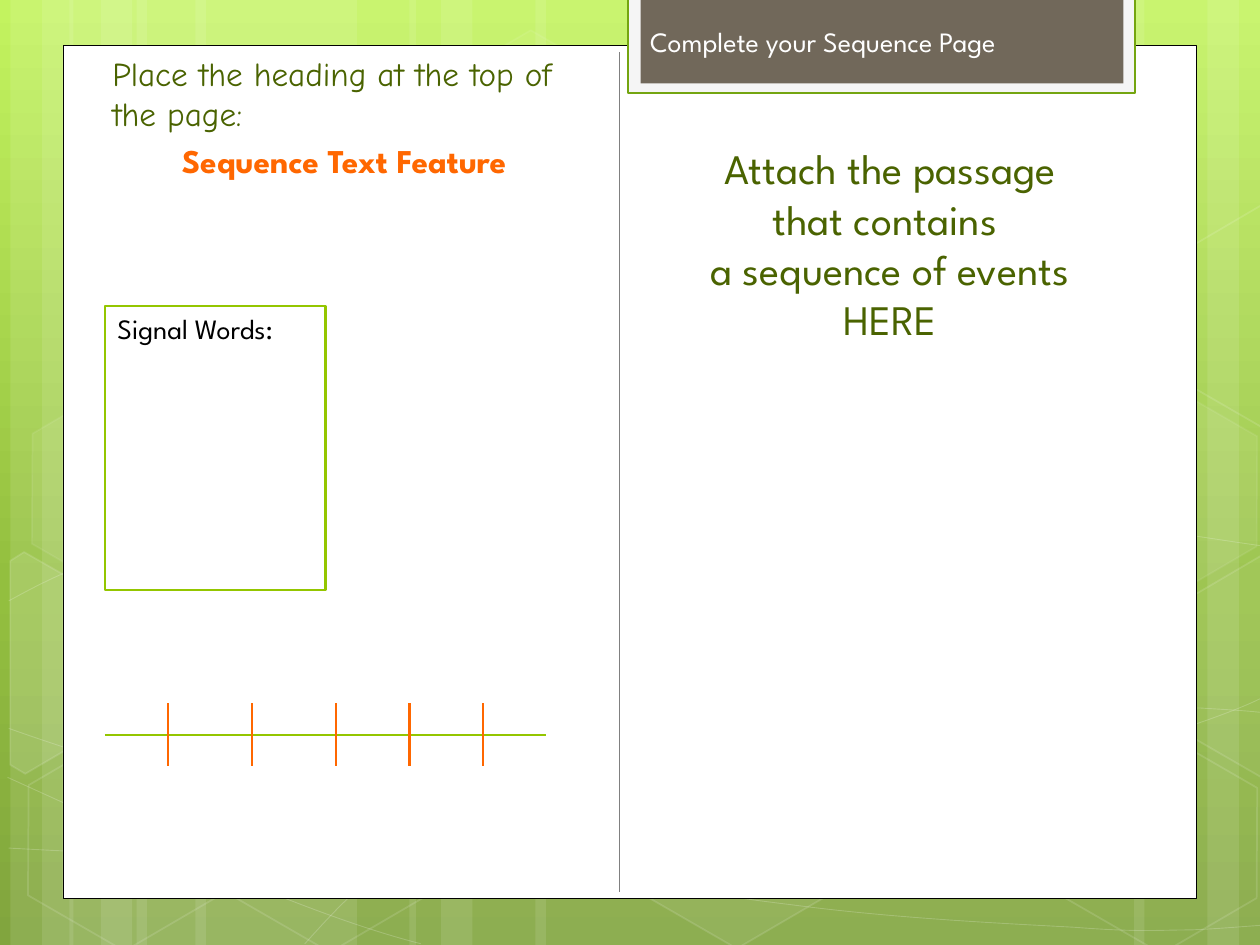
from copy import deepcopy
from dataclasses import dataclass
from math import cos, radians, sin

from lxml.etree import SubElement
from pptx import Presentation
from pptx.dml.color import RGBColor
from pptx.enum.shapes import MSO_CONNECTOR, MSO_SHAPE
from pptx.enum.text import MSO_ANCHOR, MSO_AUTO_SIZE, PP_ALIGN
from pptx.oxml.ns import qn
from pptx.util import Pt


@dataclass(frozen=True)
class Theme:
    sky: tuple = ((0, "C3F35F"), (0.62, "93BF3F"), (1, "81A53E"))
    white: str = "FFFFFF"
    black: str = "000000"
    tab: str = "F5F5F5"
    tab_edge: str = "74A510"
    taupe: str = "71685A"
    olive: str = "4A6300"
    green: str = "94C600"
    orange: str = "FF6700"
    divider: str = "808080"
    font: str = "League Spartan"
    hand_font: str = "Comic Neue"
    small: int = 16
    medium: int = 19
    large: int = 24


THEME = Theme()
INDENT = 8.64
TILT = 30
HEXAGONS = [  # left, top, fill opacity, line opacity
    (240.5, 25.9, 4, 8), (357.8, 424.1, 6, 12), (7.9, 425.5, 0, 12),
    (10.1, 224.6, 7, 8), (125.3, 426.2, 0, 12), (542.2, 326.2, 10, 12),
    (600.5, 427, 0, 12), (600.5, 226.1, 7, 8),
]
LEFT_HEXAGON = [(5.8, 320.4), (13.7, 315.4), (69.1, 347), (68.4, 410.4),
                (14.4, 442.1), (5.8, 437)]
RIGHT_HEXAGON = [(666.7, 349.2), (720.7, 317.5), (726.5, 321.1),
                 (726.5, 441.4), (721.4, 444.2), (666.7, 412.6)]
# Each curve is a start point, then two control points and an end per segment.
CURVES = [
    [(5, 484.6), (43.9, 486.7), (82.8, 488.9), (136.8, 488.2),
     (190.8, 487.4), (257.8, 486), (329.8, 478.8),
     (401.8, 471.6), (504, 457.9), (570.2, 444.2),
     (635.8, 430.6), (703.4, 409), (725, 396.7)],
    [(5, 343.4), (25.9, 331.9), (46.8, 321.1), (87.1, 310.3),
     (128.2, 299.5), (186.5, 283.7), (249.8, 278.6),
     (313.9, 273.6), (391.7, 272.9), (470.9, 278.6),
     (550.1, 284.4), (681.8, 306.7), (725, 312.5)],
    [(4.3, 444.2), (91.4, 483.8), (177.8, 523.4), (240.5, 539.3)],
    [(5, 416.2), (27.4, 424.1), (50.4, 432), (92.2, 443.5),
     (133.9, 454.3), (196.6, 472.3), (257, 484.6),
     (316.8, 496.8), (392.4, 509.8), (452.2, 517),
     (511.9, 524.9), (576, 527.8), (614.2, 529.9),
     (651.6, 532.8), (661.7, 531.4), (680.4, 531.4),
     (699.1, 530.6), (712.1, 529.2), (725, 528.5)],
    [(174.2, 539.3), (187.2, 524.9), (200.2, 510.5), (217.4, 497.5),
     (234.7, 484.6), (259.2, 470.2), (279.4, 460.1),
     (299.5, 450), (311.8, 445.7), (338.4, 438.5),
     (364.3, 431.3), (412.6, 421.2), (437.8, 416.2),
     (463.7, 411.1), (467.3, 411.1), (489.6, 409.7),
     (511.9, 407.5), (547.2, 405.4), (571.7, 404.6),
     (596.9, 403.9), (637.9, 404.6), (637.9, 404.6),
     (637.9, 404.6), (686.2, 404.6), (686.2, 404.6),
     (699.1, 405.4), (711.4, 406.1), (717.8, 406.8),
     (724.3, 407.5), (722.2, 406.8), (724.3, 407.5)],
]


def untilt(points, center):
    """Turn points back by the tilt, so that the shape's rotation restores them."""
    c, s = cos(radians(TILT)), sin(radians(TILT))
    cx, cy = center
    return [(cx + (x - cx) * c + (y - cy) * s, cy - (x - cx) * s + (y - cy) * c)
            for x, y in points]


class SlideBuilder:
    def __init__(self, slide, theme):
        self.slide, self.theme = slide, theme

    def background(self):
        fill = self.slide.background.fill
        fill.gradient()
        fill.gradient_angle = 270
        stops = self.slide._element.find(".//" + qn("a:gsLst"))
        stops.append(deepcopy(stops[0]))
        for stop, (position, color) in zip(fill.gradient_stops, self.theme.sky):
            stop.position = position
            stop.color.rgb = RGBColor.from_string(color)

    def paint(self, shape, fill=None, line=None, width=1, fill_alpha=100, line_alpha=100):
        """Set fill and line; alphas are percentages of opacity."""
        shape.shadow.inherit = False
        for part, color in ((shape.fill, fill), (shape.line.fill, line)):
            if color:
                part.solid()
                part.fore_color.rgb = RGBColor.from_string(color)
            else:
                part.background()
        if line:
            shape.line.width = Pt(width)
        for parent, alpha in (("", fill_alpha), (qn("a:ln") + "/", line_alpha)):
            color = shape._element.spPr.find(parent + qn("a:solidFill") + "/" + qn("a:srgbClr"))
            if color is not None and alpha < 100:
                SubElement(color, qn("a:alpha"), val=str(alpha * 1000))

    def preset(self, box, kind=MSO_SHAPE.RECTANGLE, **paint):
        shape = self.slide.shapes.add_shape(kind, *map(Pt, box))
        self.paint(shape, **paint)
        return shape

    def outline(self, points, close, **paint):
        (x, y), *others = [(Pt(x), Pt(y)) for x, y in points]
        builder = self.slide.shapes.build_freeform(x, y)
        builder.add_line_segments(others, close=close)
        shape = builder.convert_to_shape()
        self.paint(shape, **paint)
        return shape

    def curve(self, knots, **paint):
        """Draw the knots as a chain of cubic Bezier segments."""
        shape = self.outline(knots, False, **paint)
        segments = shape._element.find(".//" + qn("a:moveTo")).getparent()
        corners = segments.findall(qn("a:lnTo"))
        for i in range(0, len(corners), 3):
            bezier = SubElement(segments, qn("a:cubicBezTo"))
            for corner in corners[i:i + 3]:
                bezier.append(corner[0])
                segments.remove(corner)

    def line(self, start, end, color, width=1.5):
        connector = self.slide.shapes.add_connector(MSO_CONNECTOR.STRAIGHT, *map(Pt, start + end))
        connector.line.color.rgb = RGBColor.from_string(color)
        connector.line.width = Pt(width)
        SubElement(connector._element.spPr, qn("a:effectLst"))

    def text(self, shape, paragraphs, indent=0):
        """Write (text, size, color, options) paragraphs, anchored at the top."""
        frame = shape.text_frame
        frame.word_wrap = True
        frame.auto_size = MSO_AUTO_SIZE.NONE
        frame.vertical_anchor = MSO_ANCHOR.TOP
        for i, (words, size, color, options) in enumerate(paragraphs):
            paragraph = frame.add_paragraph() if i else frame.paragraphs[0]
            paragraph.alignment = options.get("align", PP_ALIGN.LEFT)
            paragraph.space_before = Pt(options.get("before", 0))
            properties = paragraph._p.get_or_add_pPr()
            properties.set("marL", str(Pt(indent)))
            properties.set("indent", "0")
            SubElement(properties, qn("a:buNone"))
            run = paragraph.add_run()
            run.text = words
            run.font.color.rgb = RGBColor.from_string(color)
            style = {"name": options.get("font", self.theme.font), "size": Pt(size),
                     "bold": options.get("bold", False)}
            for key, value in style.items():
                setattr(run.font, key, value)

    def placeholder(self, shape, box, paragraphs, indent=0):
        """Move a placeholder in front of what is drawn so far and fill it."""
        for side, value in zip(("left", "top", "width", "height"), box):
            setattr(shape, side, Pt(value))
        self.slide.shapes._spTree.append(shape._element)
        self.text(shape, paragraphs, indent)


def draw_backdrop(page):
    white = THEME.white
    page.background()
    for offset, widest, mirrored in ((0, 126, False), (33.6, 126, False),
                                     (0, 126, True), (228, 222, False)):
        for left, width in ((78, widest), (6, 36), (24, 60)):
            x = 732 - left - width if mirrored else left + offset
            page.preset((x, 0, width, 540), fill=white, fill_alpha=10)
    for knots in CURVES:
        page.curve(knots, line=white, width=0.5, line_alpha=20)
    for left, top, fill_alpha, line_alpha in HEXAGONS:
        hexagon = page.preset((left, top, 126, 109.4), MSO_SHAPE.HEXAGON,
                              fill=white if fill_alpha else None, line=white,
                              fill_alpha=fill_alpha, line_alpha=line_alpha)
        hexagon.adjustments[0] = 0.285
        hexagon.rotation = TILT
    upper_right = [(x, y - 200.2) for x, y in RIGHT_HEXAGON]
    for points, center, alpha in ((LEFT_HEXAGON, (25.9, 385.2), 10),
                                  (RIGHT_HEXAGON, (709.2, 374.4), 4),
                                  (upper_right, (709.2, 174.2), 0)):
        clipped = page.outline(untilt(points, center), True, fill=white if alpha else None,
                               line=white, fill_alpha=alpha, line_alpha=12)
        clipped.rotation = TILT
    page.preset((36, 26, 648, 487.2), fill=white, line=THEME.black, width=0.5)
    page.preset((359, -1.4, 289.6, 54.7), fill=THEME.tab, line=THEME.tab_edge, width=1.25)
    page.preset((366.1, -1.4, 275.9, 49), fill=THEME.taupe)


def main():
    presentation = Presentation()
    presentation.slide_width, presentation.slide_height = Pt(720), Pt(540)
    slide = presentation.slides.add_slide(presentation.slide_layouts[1])
    heading, instructions = slide.shapes.title, slide.placeholders[1]
    page = SlideBuilder(slide, THEME)
    draw_backdrop(page)

    page.placeholder(instructions, (48.3, 27, 288, 208.8), [
        ("Place the heading at the top of the page:", THEME.medium, THEME.olive,
         {"font": THEME.hand_font, "before": 3.8}),
        ("Sequence Text Feature", THEME.medium, THEME.orange,
         {"align": PP_ALIGN.CENTER, "bold": True, "before": 4}),
    ], INDENT)
    passage = slide.shapes.add_textbox(*map(Pt, (354.2, 78, 300, 124)))
    page.text(passage, [(words, THEME.large, THEME.olive, {"align": PP_ALIGN.CENTER})
                        for words in ("Attach the passage", "that contains ",
                                      "a sequence of events", "HERE")], INDENT)
    signal_words = page.preset((60, 174.7, 126, 162.5), fill=THEME.white,
                               line=THEME.green, width=1.25)
    page.text(signal_words, [("Signal Words:", THEME.small, THEME.black, {})])
    page.placeholder(heading, (364.3, 10.4, 307.4, 26.6),
                     [("Complete your Sequence Page", THEME.small, THEME.white, {})])

    page.line((354, 30), (354, 510), THEME.divider, 0.75)
    page.line((60, 420), (312, 420), THEME.green)
    for event in (96, 144, 192, 234, 276):
        page.line((event, 402), (event, 438), THEME.orange)
    presentation.save("out.pptx")


if __name__ == "__main__":
    main()
